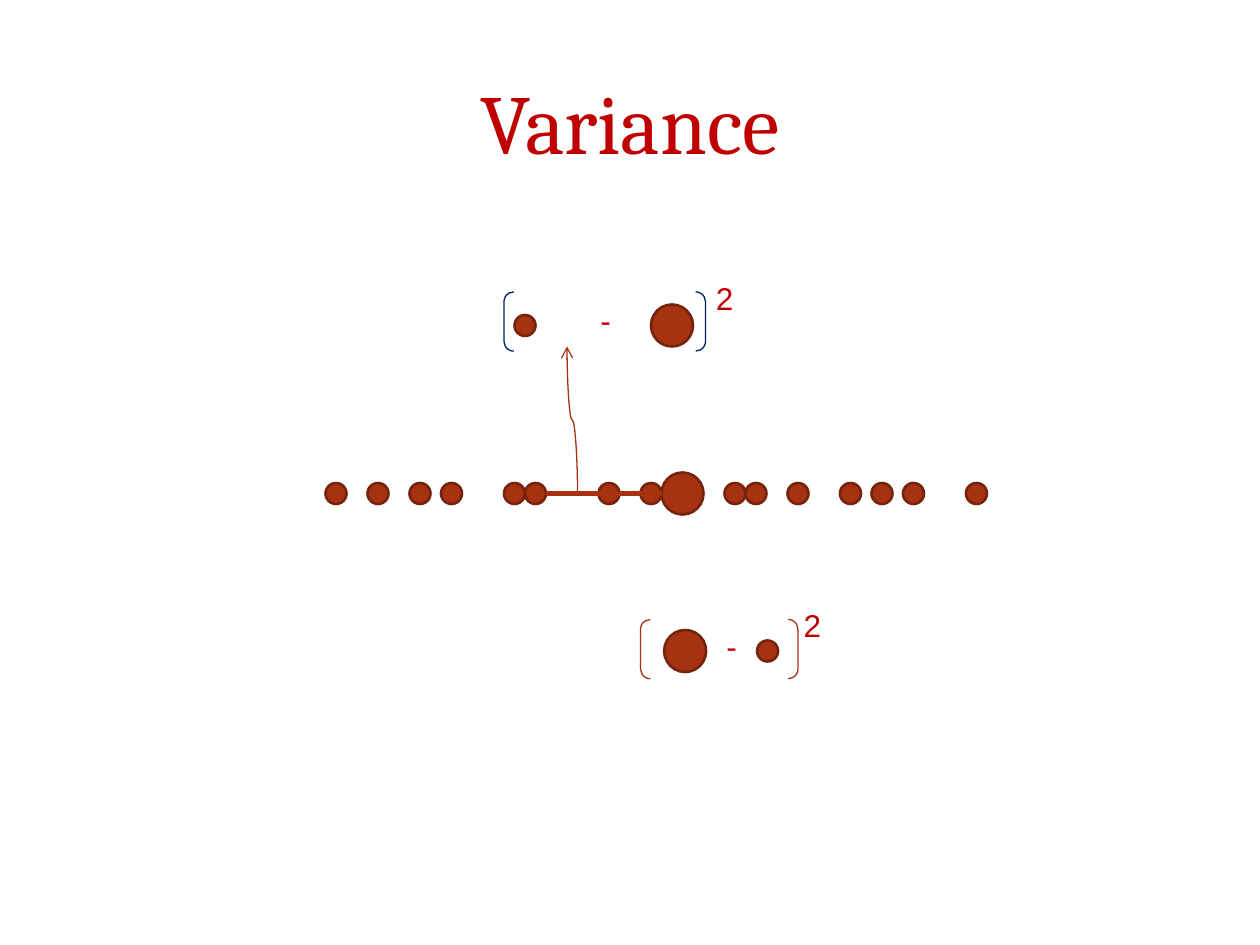
import pptx
import pptx.dml.color
import pptx.enum.shapes
import pptx.enum.text
import pptx.oxml
import pptx.oxml.ns
import pptx.util
import lxml.etree

deck = pptx.Presentation()
deck.slide_width = pptx.util.Inches(10)
deck.slide_height = pptx.util.Inches(7.5)
CELL = deck.slide_width / 120
SHAPES = pptx.enum.shapes.MSO_SHAPE
LINES = pptx.enum.shapes.MSO_CONNECTOR
RUST, DARK_RUST, NAVY, RED = "A63212", "75230C", "002060", "C00000"
SMALL, LARGE = 2, 4


def cells(*counts):
    return [round(count * CELL) for count in counts]


def paint(color_format, code):
    color_format.rgb = pptx.dml.color.RGBColor.from_string(code)


page = deck.slides.add_slide(deck.slide_layouts[5])
title = page.shapes.title
title.left, title.top, title.width, title.height = cells(9, 4, 102, 15)
title.text_frame.vertical_anchor = pptx.enum.text.MSO_ANCHOR.MIDDLE
para = title.text_frame.paragraphs[0]
para.alignment = pptx.enum.text.PP_ALIGN.CENTER
span = para.add_run()
span.text = "Variance"
span.font.size = pptx.util.Pt(48)
span.font.name = "Cambria"
paint(span.font.color, RED)

sample_columns = [31, 35, 39, 42, 48, 50, 57, 61, 69, 71, 75, 80, 83, 86, 92]
dots = [(column, 46, SMALL) for column in sample_columns]
dots += [(63, 45, LARGE)]
dots += [(63.25, 60, LARGE), (72.1, 61, SMALL)]
dots += [(49, 30, SMALL), (62, 29, LARGE)]
for column, row, size in dots:
    dot = page.shapes.add_shape(SHAPES.OVAL, *cells(column, row, size, size))
    dot.shadow.inherit = False
    dot.fill.solid()
    paint(dot.fill.fore_color, RUST)
    paint(dot.line.color, DARK_RUST)
    dot.line.width = pptx.util.Pt(1.5)

distance = page.shapes.add_connector(LINES.STRAIGHT, *cells(52, 47, 63, 47))
distance.line.width = pptx.util.Pt(2.75)
arrow = page.shapes.add_connector(LINES.CURVE, *cells(47.5, 40.5, 61.5, 39.5))
arrow.rotation = 270 if hasattr(arrow, "rotation") else None
arrow._element.spPr.find(pptx.oxml.ns.qn("a:xfrm")).set("rot", "16200000")
arrow.line.width = pptx.util.Pt(0.75)
for connector in (distance, arrow):
    paint(connector.line.color, RUST)
    lxml.etree.SubElement(connector._element.spPr, pptx.oxml.ns.qn("a:effectLst"))
outline = arrow._element.spPr.find(pptx.oxml.ns.qn("a:ln"))
lxml.etree.SubElement(outline, pptx.oxml.ns.qn("a:tailEnd"), type="arrow")

for column, row, width, code in [(61, 59, 15, RUST), (48, 27.8, 19.2, NAVY)]:
    bracket = page.shapes.add_shape(
        SHAPES.DOUBLE_BRACKET, *cells(column, row, width, 5.65))
    bracket.shadow.inherit = False
    bracket.fill.background()
    paint(bracket.line.color, code)
    bracket.line.width = pptx.util.Pt(0.75)

symbols = [("-", 68, 59.15, 3.5), ("2", 75.35, 57.15, 4.1),
           ("-", 56, 28.1, 3.5), ("2", 67, 26, 4.1)]
for symbol, column, row, width in symbols:
    box = page.shapes.add_textbox(*cells(column, row, width, 4.85))
    box.text_frame.word_wrap = False
    box.text_frame.auto_size = pptx.enum.text.MSO_AUTO_SIZE.SHAPE_TO_FIT_TEXT
    span = box.text_frame.paragraphs[0].add_run()
    span.text = symbol
    span.font.size = pptx.util.Pt(18)
    span.font.name = "Arial"
    paint(span.font.color, RED)

deck.save("out.pptx")
